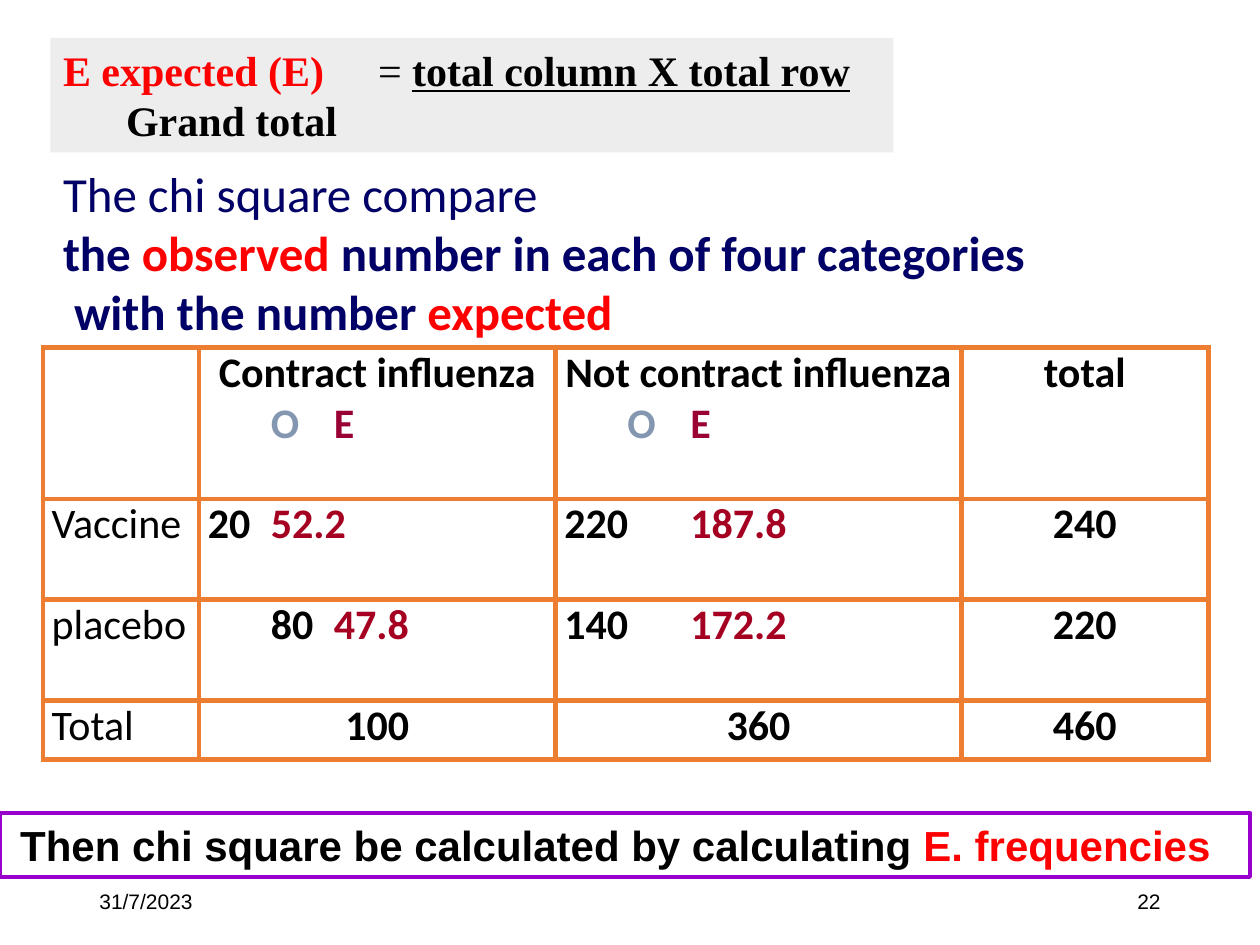
from pptx import Presentation, util as u
from pptx.dml.color import RGBColor
from pptx.enum import shapes, text
from pptx.oxml import xmlchemy
from pptx.oxml.ns import qn
from lxml import etree

INK = {"black": "000000", "red": "FF0000", "navy": "000066", "slate": "8497B0",
       "wine": "990033", "ruby": "A50021", "grey": "EDEDED", "white": "FFFFFF",
       "edge": "ED7D31", "violet": "9900CC"}
LEFT, MID, RIGHT = text.PP_ALIGN.LEFT, text.PP_ALIGN.CENTER, text.PP_ALIGN.RIGHT

# Content: a line is (runs, tab stops, alignment); a run is (words, colour, bold, underline)
FORMULA = [
    ([("E expected (E)", "red", True), ("\t= ", "black", False),
      ("total column X total row", "black", True, True)], [2.33], LEFT),
    ([("\tGrand total", "black", True)], [3], LEFT),
]
INTRO = [
    ([("The chi square compare", "navy", False)], [], LEFT),
    ([("the ", "navy", True), ("observed ", "red", True),
      ("number in each of four categories", "navy", True)], [], LEFT),
    ([(" with the number", "navy", True), (" expected", "red", True)], [], LEFT),
]
BANNER = [([("Then chi square be calculated by calculating ", "black", True),
            ("E. frequencies", "red", True)], [], LEFT)]


def plain(words, side=LEFT, bold=False):
    return [([(words, "black", bold)], [], side)]


def total(words):
    return plain(words, MID, True)


def head(words, stops):
    return total(words) + [([("\tO", "slate", True), ("\tE", "wine", True)], stops, LEFT)]


def pair(seen, due, stops):
    return [([(seen, "black", True), ("\t" + due, "ruby", True)], stops, LEFT)]


TABLE = [
    [[], head("Contract influenza", [0.16, 1.36]),
     head("Not contract influenza", [0.24, 1.68]), total("total")],
    [plain("Vaccine"), pair("20", "52.2", [1.25]), pair("220", "187.8", [1.27]), total("240")],
    [plain("placebo"), pair("\t80", "47.8", [0.07, 1.17]),
     pair("140", "172.2", [1.35]), total("220")],
    [plain("Total"), total("100"), total("360"), total("460")],
]
COLS = [1.24, 2.83, 3.22, 1.96]
ROWS = [1.2, 0.8, 0.8, 0.47]


def tint(name):
    return RGBColor.from_string(INK[name])


def write(frame, lines, size, font):
    frame.word_wrap = True
    for i, (runs, stops, side) in enumerate(lines):
        para = frame.paragraphs[0] if i == 0 else frame.add_paragraph()
        para.alignment = side
        para.space_before = u.Pt(0)
        props = para._p.get_or_add_pPr()
        props.set("marL", "0")
        props.set("indent", "0")
        etree.SubElement(props, qn("a:buNone"))
        if stops:
            tabs = etree.SubElement(props, qn("a:tabLst"))
            for stop in stops:
                etree.SubElement(tabs, qn("a:tab"), pos=str(u.Inches(stop)), algn="l")
        para.font.size, para.font.name = u.Pt(size), font
        for words, ink, bold, *line in runs:
            run = para.add_run()
            run.text = words
            run.font.bold = bold
            run.font.color.rgb = tint(ink)
            if line:
                run.font.underline = True


def place(shape, *box):
    shape.left, shape.top, shape.width, shape.height = map(u.Inches, box)


def border(cell, ink, width):
    props = cell._tc.get_or_add_tcPr()
    for i, side in enumerate(("lnL", "lnR", "lnT", "lnB")):
        line = etree.Element(qn("a:" + side), w=str(u.Pt(width)))
        fill = etree.SubElement(line, qn("a:solidFill"))
        etree.SubElement(fill, qn("a:srgbClr"), val=INK[ink])
        props.insert(i, line)


deck = Presentation()
deck.slide_width, deck.slide_height = u.Inches(10), u.Inches(7.5)
slide = deck.slides.add_slide(deck.slide_layouts[1])

# Formula and introduction
title, body = slide.placeholders
place(title, 0.4, 0.3, 6.69, 0.91)
title.fill.solid()
title.fill.fore_color.rgb = tint("grey")
place(body, 0.4, 1.25, 8.19, 1.51)
for shape, lines, size, font in ((title, FORMULA, 24, "Times New Roman"),
                                 (body, INTRO, 28, "Calibri")):
    shape.text_frame.auto_size = text.MSO_AUTO_SIZE.NONE
    shape.text_frame.vertical_anchor = text.MSO_ANCHOR.TOP
    write(shape.text_frame, lines, size, font)

# Observed and expected counts
grid = slide.shapes.add_table(len(ROWS), len(COLS), u.Inches(0.34), u.Inches(2.76),
                              u.Inches(sum(COLS)), u.Inches(sum(ROWS))).table
for col, width in zip(grid.columns, COLS):
    col.width = u.Inches(width)
for r, (height, row) in enumerate(zip(ROWS, TABLE)):
    grid.rows[r].height = u.Inches(height)
    for c, lines in enumerate(row):
        cell = grid.cell(r, c)
        cell.margin_left = cell.margin_right = u.Inches(0.07)
        cell.margin_top = cell.margin_bottom = 0
        cell.fill.solid()
        cell.fill.fore_color.rgb = tint("white")
        border(cell, "edge", 3)
        write(cell.text_frame, lines, 24, "Calibri")

# Closing banner
bar = slide.shapes.add_shape(shapes.MSO_SHAPE.RECTANGLE, 0, u.Inches(6.45),
                             u.Inches(9.92), u.Inches(0.51))
bar.shadow.inherit = False
bar.fill.background()
bar.line.color.rgb = tint("violet")
bar.line.width = u.Pt(2.25)
bar.text_frame.margin_left = u.Inches(0.16)
write(bar.text_frame, BANNER, 24, "Arial")

# Date and page number
for left, words, side in ((0.69, "31/7/2023", LEFT), (7.06, "22", RIGHT)):
    foot = slide.shapes.add_textbox(0, 0, 0, 0)
    place(foot, left, 6.95, 2.25, 0.4)
    foot.text_frame.vertical_anchor = text.MSO_ANCHOR.MIDDLE
    write(foot.text_frame, plain(words, side), 12, "Arial")

deck.save("out.pptx")
